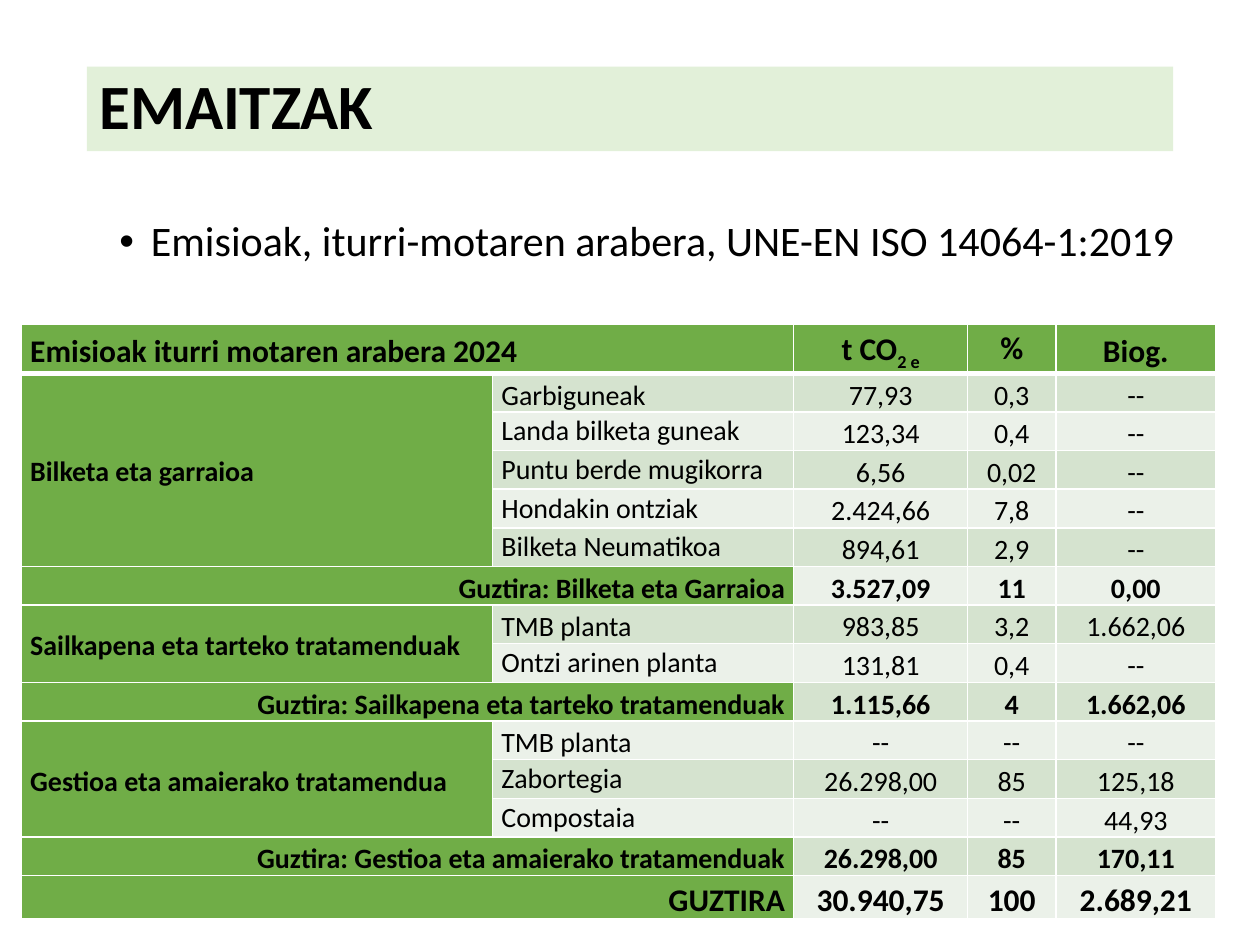
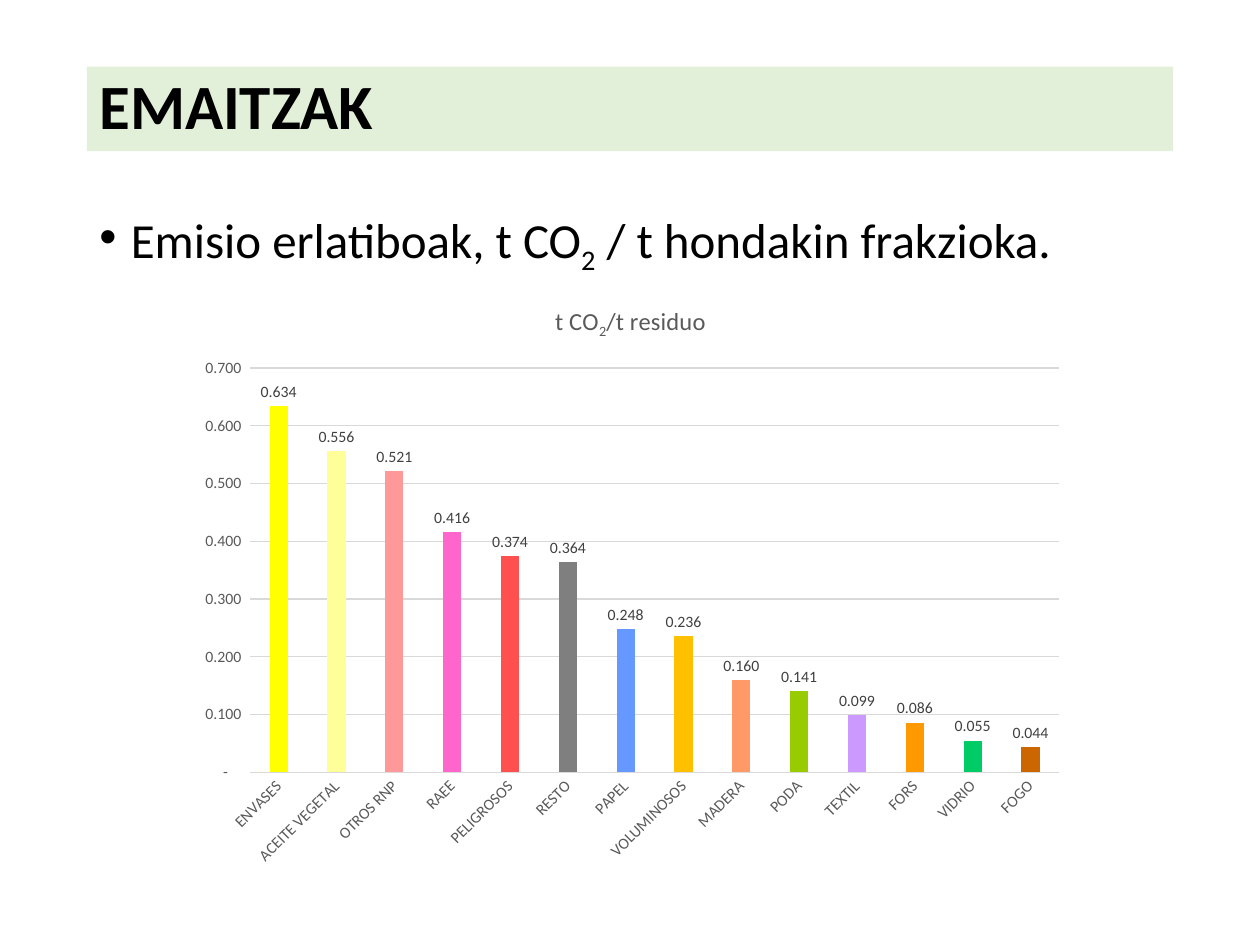
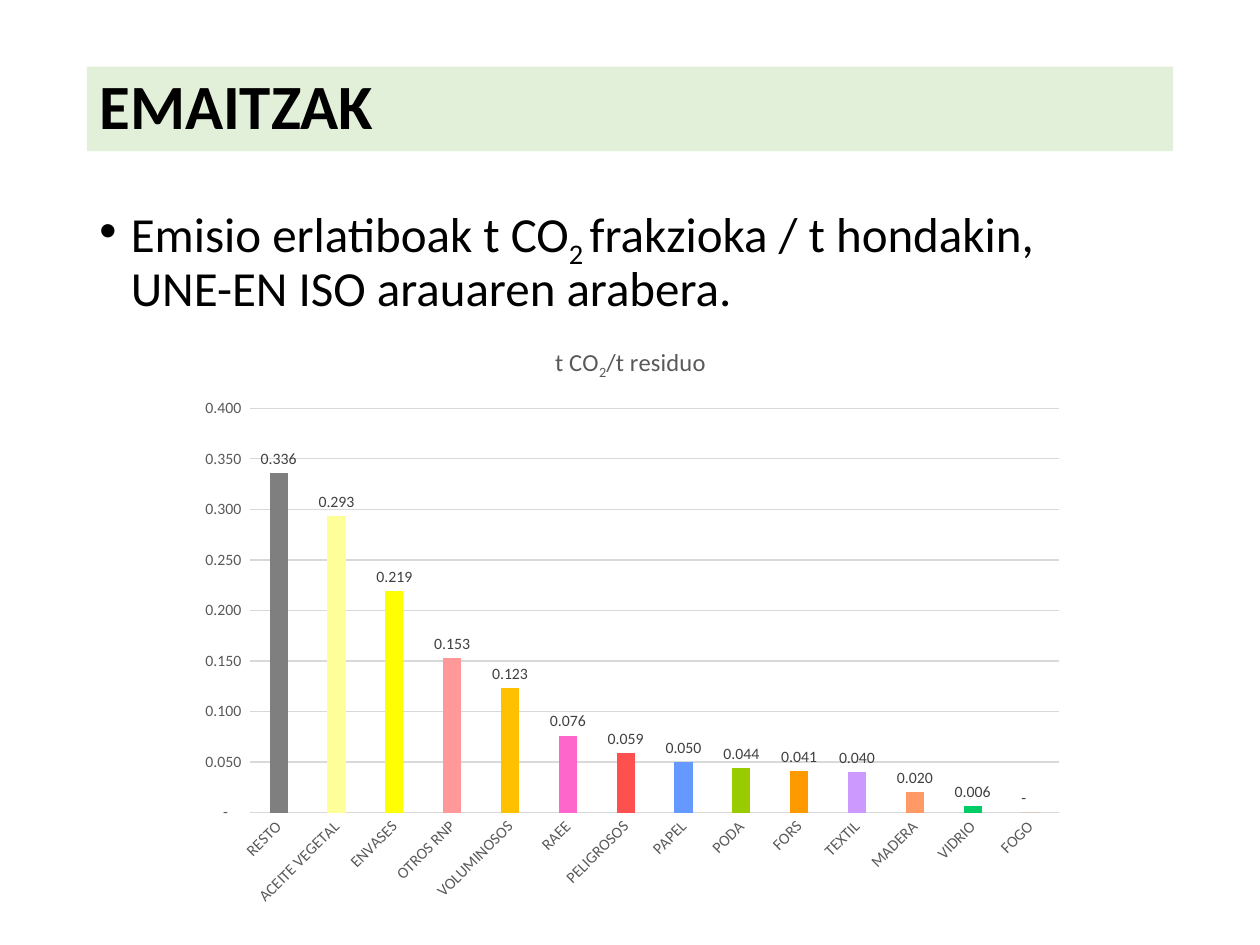
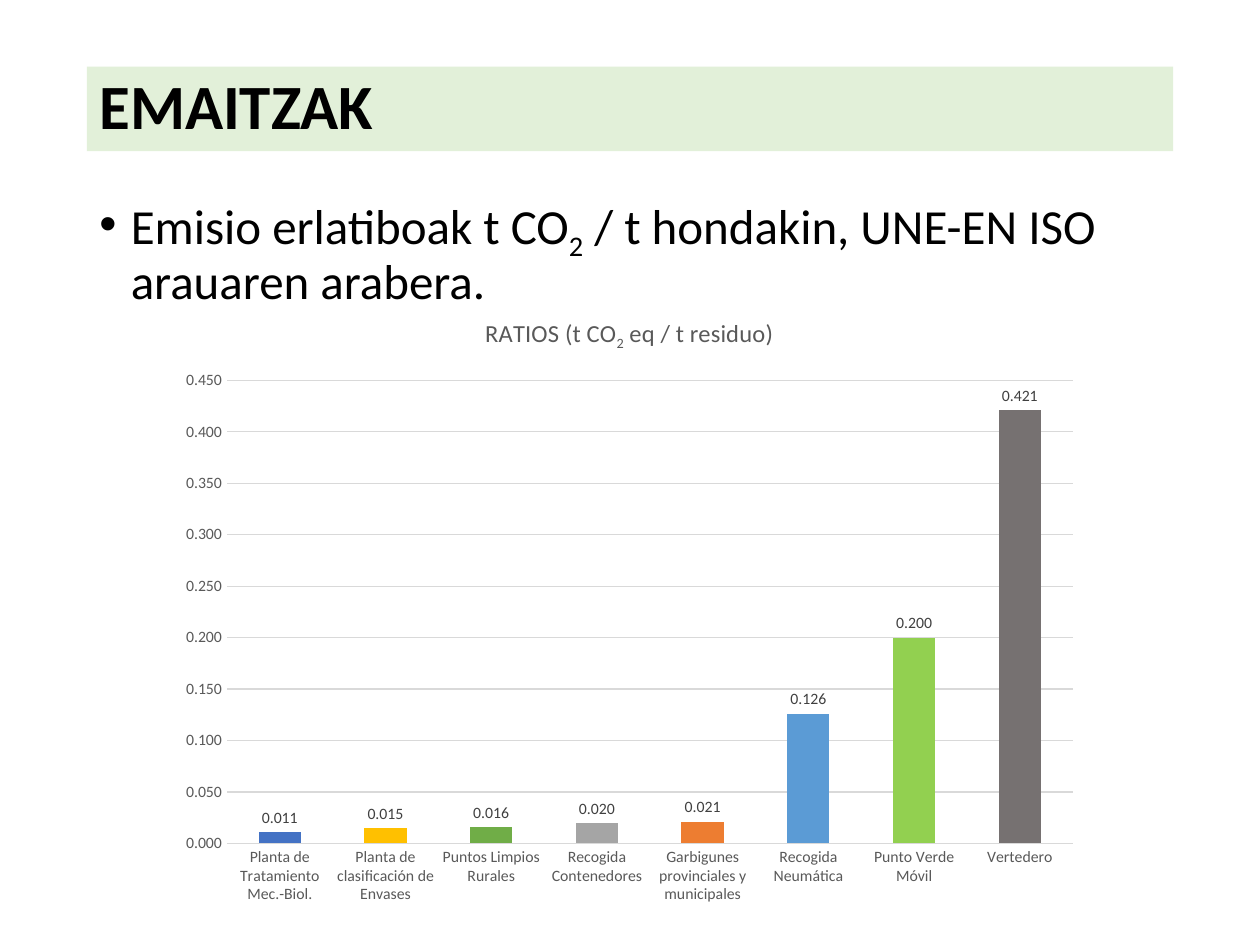
from lxml.etree import SubElement
from pptx import Presentation
from pptx.chart.data import CategoryChartData
from pptx.dml.color import RGBColor
from pptx.enum.chart import XL_CHART_TYPE, XL_LABEL_POSITION, XL_TICK_MARK
from pptx.enum.shapes import MSO_SHAPE
from pptx.enum.text import MSO_ANCHOR, PP_ALIGN
from pptx.oxml.ns import qn
from pptx.util import Inches, Pt

FONT = "Calibri"
BLACK, WHITE = "000000", "FFFFFF"
BAND, GREEN = "E2F0D9", "70AD47"
STRIPES = ["EBF1E9", "D5E3CF"]
AXIS_TEXT, LABEL_TEXT, GRID = "595959", "404040", "D9D9D9"
GRID_COLUMNS, GRID_ROWS = 100, 75
DASH_FORMAT = r"_-* #,##0.000_-;\-* #,##0.000_-;_-* \-??"

TABLE_HEADER = ["Emisioak iturri motaren arabera 2024", "", "t CO|2 e|", "%", "Biog."]
COLUMN_WIDTHS = [37.4, 23.9, 13.8, 7, 12.7]
EMISSION_GROUPS = [
    ("Bilketa eta garraioa", [
        ("Garbiguneak", "77,93", "0,3", "--"),
        ("Landa bilketa guneak", "123,34", "0,4", "--"),
        ("Puntu berde mugikorra", "6,56", "0,02", "--"),
        ("Hondakin ontziak", "2.424,66", "7,8", "--"),
        ("Bilketa Neumatikoa", "894,61", "2,9", "--"),
    ], ("Guztira: Bilketa eta Garraioa", "", "3.527,09", "11", "0,00")),
    ("Sailkapena eta tarteko tratamenduak", [
        ("TMB planta", "983,85", "3,2", "1.662,06"),
        ("Ontzi arinen planta", "131,81", "0,4", "--"),
    ], ("Guztira: Sailkapena eta tarteko tratamenduak", "", "1.115,66", "4", "1.662,06")),
    ("Gestioa eta amaierako tratamendua", [
        ("TMB planta", "--", "--", "--"),
        ("Zabortegia", "26.298,00", "85", "125,18"),
        ("Compostaia", "--", "--", "44,93"),
    ], ("Guztira: Gestioa eta amaierako tratamenduak", "", "26.298,00", "85", "170,11")),
]
GRAND_TOTAL = ("GUZTIRA", "", "30.940,75", "100", "2.689,21")

FRACTION_COLORS = {
    "ENVASES": "FFFF00", "ACEITE VEGETAL": "FFFF99", "OTROS RNP": "FF9999",
    "RAEE": "FF66CC", "PELIGROSOS": "FF5050", "RESTO": "7F7F7F",
    "PAPEL": "6699FF", "VOLUMINOSOS": "FFC000", "MADERA": "FF9966",
    "PODA": "99CC00", "TEXTIL": "CC99FF", "FORS": "FF9900",
    "VIDRIO": "00CC66", "FOGO": "CC6600",
}
FRACTION_RATIOS = {
    "ENVASES": 0.634, "ACEITE VEGETAL": 0.556, "OTROS RNP": 0.521,
    "RAEE": 0.416, "PELIGROSOS": 0.374, "RESTO": 0.364, "PAPEL": 0.248,
    "VOLUMINOSOS": 0.236, "MADERA": 0.16, "PODA": 0.141, "TEXTIL": 0.099,
    "FORS": 0.086, "VIDRIO": 0.055, "FOGO": 0.044,
}
STANDARD_RATIOS = {
    "RESTO": 0.336, "ACEITE VEGETAL": 0.293, "ENVASES": 0.219,
    "OTROS RNP": 0.153, "VOLUMINOSOS": 0.123, "RAEE": 0.076,
    "PELIGROSOS": 0.059, "PAPEL": 0.05, "PODA": 0.044, "FORS": 0.041,
    "TEXTIL": 0.04, "MADERA": 0.02, "VIDRIO": 0.006, "FOGO": 0,
}
FACILITY_RATIOS = {
    "Planta de Tratamiento Mec.-Biol.": 0.011,
    "Planta de clasificación de Envases": 0.015,
    "Puntos Limpios Rurales": 0.016,
    "Recogida Contenedores": 0.02,
    "Garbigunes provinciales y municipales": 0.021,
    "Recogida Neumática": 0.126,
    "Punto Verde Móvil": 0.2,
    "Vertedero": 0.421,
}
FACILITY_COLORS = dict(zip(FACILITY_RATIOS, [
    "4472C4", "FFC000", GREEN, "A5A5A5", "ED7D31", "5B9BD5", "92D050", "767171"]))


def color(value):
    """Turn a hex string into a colour."""
    return RGBColor.from_string(value)


def style_font(font, size, hue=BLACK, bold=False):
    """Give a font the deck's typeface with a size, colour and weight."""
    font.name, font.size, font.bold = FONT, Pt(size), bold
    font.color.rgb = color(hue)


def write(para, text, size, hue=BLACK, bold=False):
    """Write text whose parts between bars are subscripts."""
    for part, words in enumerate(text.split("|")):
        for line, piece in enumerate(words.split("\n")):
            if line:
                para.add_line_break()
            if piece:
                span = para.add_run()
                span.text = piece
                style_font(span.font, size, hue, bold)
                if part % 2:
                    span.font._element.set("baseline", "-25000")


class ResultsDeck:
    """Hold the deck, its grid and the current slide."""

    def __init__(self):
        """Start an empty deck."""
        self.deck = Presentation()
        self.deck.slide_width, self.deck.slide_height = Inches(10), Inches(7.5)
        self.page = None

    def across(self, columns):
        """Measure grid columns."""
        return round(self.deck.slide_width * columns / GRID_COLUMNS)

    def down(self, rows):
        """Measure grid rows."""
        return round(self.deck.slide_height * rows / GRID_ROWS)

    def place(self, left, top, width, height):
        """Turn a grid area into slide lengths."""
        return self.across(left), self.down(top), self.across(width), self.down(height)

    def add_page(self):
        """Add a slide with its title band."""
        self.page = self.deck.slides.add_slide(self.deck.slide_layouts[6])
        band = self.page.shapes.add_shape(MSO_SHAPE.RECTANGLE, *self.place(6.9, 5.3, 86.2, 6.7))
        band.shadow.inherit = False
        band.fill.solid()
        band.fill.fore_color.rgb = color(BAND)
        band.line.fill.background()
        band.text_frame.vertical_anchor = MSO_ANCHOR.MIDDLE
        para = band.text_frame.paragraphs[0]
        para.alignment, para.line_spacing = PP_ALIGN.LEFT, 0.9
        write(para, "EMAITZAK", 36, bold=True)

    def add_bullet(self, text, area, size=28):
        """Add the bulleted sentence under the title."""
        box = self.page.shapes.add_textbox(*self.place(*area))
        box.text_frame.word_wrap = True
        para = box.text_frame.paragraphs[0]
        para.line_spacing, para.space_before = 0.9, Pt(10)
        properties = para._p.get_or_add_pPr()
        properties.set("marL", str(Inches(0.25)))
        properties.set("indent", str(-Inches(0.25)))
        SubElement(properties, qn("a:buFont"), typeface="Arial")
        SubElement(properties, qn("a:buChar"), char="•")
        write(para, text, size)

    def fill_cell(self, cell, text, fill, size, bold, align, spaced=True, bottom=1):
        """Fill one table cell and draw its borders."""
        cell.margin_left = cell.margin_right = Inches(0.07)
        cell.margin_top = cell.margin_bottom = 0
        cell.vertical_anchor = MSO_ANCHOR.TOP if text == "%" else MSO_ANCHOR.MIDDLE
        para = cell.text_frame.paragraphs[0]
        para.alignment = align
        if spaced:
            para.line_spacing, para.space_after = 1.15, Pt(10)
        write(para, text, size, bold=bold)
        properties = cell._tc.get_or_add_tcPr()
        for side, weight in zip("LRTB", [1, 1, 1, bottom]):
            border = SubElement(properties, qn(f"a:ln{side}"), w=str(Pt(weight)))
            paint = SubElement(border, qn("a:solidFill"))
            SubElement(paint, qn("a:srgbClr"), val=WHITE)
        cell.fill.solid()
        cell.fill.fore_color.rgb = color(fill)

    def add_emissions_table(self):
        """Add the table of emissions by source type."""
        rows, group_starts = [TABLE_HEADER], {}
        for name, sources, total in EMISSION_GROUPS:
            group_starts[len(rows)] = len(sources)
            rows += [(name if index == 0 else "", *source)
                     for index, source in enumerate(sources)]
            rows.append(total)
        rows.append(GRAND_TOTAL)
        last = len(rows) - 1
        frame = self.page.shapes.add_table(
            len(rows), len(COLUMN_WIDTHS), *self.place(1.7, 25.7, 94.8, 43))
        table = frame.table
        table.first_row = table.horz_banding = False
        for column, width in zip(table.columns, COLUMN_WIDTHS):
            column.width = self.across(width)
        for index, values in enumerate(rows):
            outer = index in (0, last)
            table.rows[index].height = self.down(3.2 if outer else 2.8)
            wide = values[1] == ""
            for column, text in enumerate(values):
                green = index == 0 or column == 0 or (wide and column == 1)
                align = PP_ALIGN.CENTER if column > 1 else PP_ALIGN.LEFT
                if wide and index and column < 2:
                    align = PP_ALIGN.RIGHT
                self.fill_cell(
                    table.cell(index, column), text,
                    GREEN if green else STRIPES[index % 2],
                    18 if outer else 16, green or wide, align,
                    spaced=column != 1 or index in group_starts,
                    bottom=1 if index else 3)
            if wide:
                table.cell(index, 0).merge(table.cell(index, 1))
        for start, count in group_starts.items():
            table.cell(start, 0).merge(table.cell(start + count - 1, 0))

    def add_ratio_chart(self, title, ratios, colors, area, top_value, step,
                        number_format=DASH_FORMAT, gap=219, overlap=-27, turn=-45):
        """Add a column chart of ratios with one colour per column."""
        data = CategoryChartData(number_format=number_format)
        data.categories = list(ratios)
        data.add_series("Series 1", list(ratios.values()))
        chart = self.page.shapes.add_chart(
            XL_CHART_TYPE.COLUMN_CLUSTERED, *self.place(*area), data).chart
        style_font(chart.font, 10)
        chart.has_legend = False
        chart.has_title = True
        chart.chart_title.include_in_layout = False
        write(chart.chart_title.text_frame.paragraphs[0], title, 14, AXIS_TEXT)

        names, values = chart.category_axis, chart.value_axis
        for axis in (names, values):
            axis.major_tick_mark = axis.minor_tick_mark = XL_TICK_MARK.NONE
            style_font(axis.tick_labels.font, 9, AXIS_TEXT)
        turned = names._element.find(qn("c:txPr")).find(qn("a:bodyPr"))
        turned.set("rot", str(turn * 60000))
        values.minimum_scale, values.maximum_scale, values.major_unit = 0, top_value, step
        values.tick_labels.number_format = number_format
        values.tick_labels.number_format_is_linked = False
        values.format.line.fill.background()
        for line in (names.format.line, values.major_gridlines.format.line):
            line.color.rgb = color(GRID)
            line.width = Pt(0.75)

        plot = chart.plots[0]
        plot.vary_by_categories = False
        plot.gap_width, plot.overlap = gap, overlap
        series = plot.series[0]
        series.invert_if_negative = False
        for index, name in enumerate(ratios):
            fill = series.points[index].format.fill
            fill.solid()
            fill.fore_color.rgb = color(colors[name])
        labels = series.data_labels
        labels.show_value = True
        labels.position = XL_LABEL_POSITION.OUTSIDE_END
        labels.number_format, labels.number_format_is_linked = number_format, False
        style_font(labels.font, 9, LABEL_TEXT)


def main():
    """Build the four result slides."""
    results = ResultsDeck()

    results.add_page()
    results.add_bullet("Emisioak, iturri-motaren arabera, UNE-EN ISO 14064-1:2019",
                       (8.5, 17, 89.7, 52.2), 24)
    results.add_emissions_table()

    results.add_page()
    results.add_bullet("Emisio erlatiboak, t CO|2| / t hondakin frakzioka.",
                       (6.9, 16.2, 86.2, 57.8))
    results.add_ratio_chart("t CO|2|/t residuo", FRACTION_RATIOS, FRACTION_COLORS,
                            (14.6, 22.4, 70.9, 47.2), 0.7, 0.1)

    results.add_page()
    results.add_bullet("Emisio erlatiboak t CO|2 |frakzioka / t hondakin,\n"
                       "UNE-EN ISO arauaren arabera.", (6.9, 15.7, 89.7, 57.8))
    results.add_ratio_chart("t CO|2|/t residuo", STANDARD_RATIOS, FRACTION_COLORS,
                            (14.6, 25.6, 70.9, 47.2), 0.4, 0.05)

    results.add_page()
    results.add_bullet("Emisio erlatiboak t CO|2| / t hondakin, UNE-EN ISO arauaren arabera.",
                       (6.9, 15.1, 89.7, 57.8))
    results.add_ratio_chart("RATIOS (t CO|2| eq / t residuo)", FACILITY_RATIOS,
                            FACILITY_COLORS, (13.3, 23.3, 73.3, 49.4), 0.45, 0.05,
                            number_format="0.000", gap=150, overlap=0, turn=0)

    results.deck.save("out.pptx")


if __name__ == "__main__":
    main()
